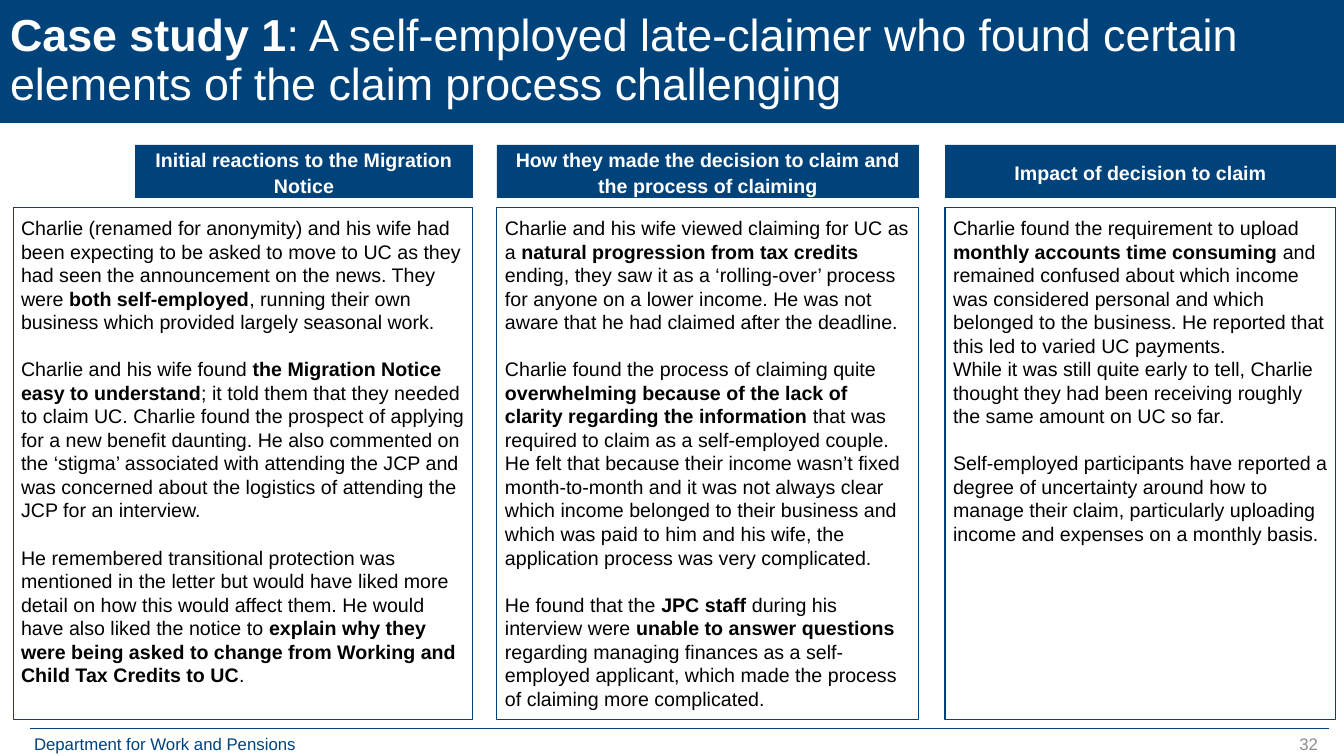
from pptx import Presentation
from pptx.dml.color import RGBColor
from pptx.enum.shapes import MSO_CONNECTOR as Conn, MSO_SHAPE as Kind
from pptx.enum.text import MSO_ANCHOR as Anchor, MSO_AUTO_SIZE as Fit, PP_ALIGN as Align
from pptx.oxml.ns import qn
from pptx.util import Emu, Pt
from lxml.etree import SubElement

WIDE, HIGH = 1344, 756
SCALE = 12192000 / WIDE


def px(num):
    return Emu(round(num * SCALE))


def paint(color, code):
    color.rgb = RGBColor.from_string(code)


def write(frame, paras, size=14, color="000000", align=Align.LEFT, anchor=Anchor.TOP,
          inset=(10, 5), lead=None, gaps=()):
    frame.word_wrap = True
    frame.auto_size = Fit.NONE
    frame.vertical_anchor = anchor
    frame.margin_left = frame.margin_right = px(inset[0])
    frame.margin_top = frame.margin_bottom = px(inset[1])
    for num, text in enumerate(paras):
        para = frame.add_paragraph() if num else frame.paragraphs[0]
        para.alignment = align
        if lead:
            para.line_spacing = lead
        if num in gaps:
            para.space_before = Pt(16.8)
        for part, words in enumerate(text.split("*")):
            if words:
                run = para.add_run()
                run.text = words
                font = run.font
                font.name, font.size, font.bold = "Arial", Pt(size), part % 2 == 1
                paint(font.color, color)


class Page:
    blue, white, gray = "00437B", "FFFFFF", "8C8C8C"

    def __init__(self, deck):
        self.slide = deck.slides.add_slide(deck.slide_layouts[5])
        self.shapes = self.slide.shapes

    def title(self, text, high):
        head = self.shapes.title
        head.left, head.top, head.width, head.height = px(0), px(0), px(WIDE), px(high)
        head.fill.solid()
        paint(head.fill.fore_color, self.blue)
        write(head.text_frame, [text], size=32, color=self.white, anchor=Anchor.MIDDLE, lead=0.9)

    def label(self, text, left, top, width, high, **style):
        box = self.shapes.add_textbox(px(left), px(top), px(width), px(high))
        write(box.text_frame, [text], size=12, **style)

    def rule(self, left, right, top):
        line = self.shapes.add_connector(Conn.STRAIGHT, px(left), px(top), px(right), px(top))
        line.line.width = Pt(0.5)
        paint(line.line.color, self.blue)
        SubElement(line._element.spPr, qn("a:effectLst"))

    def rect(self, left, top, width, high):
        box = self.shapes.add_shape(Kind.RECTANGLE, px(left), px(top), px(width), px(high))
        box.shadow.inherit = False
        return box

    def banner(self, text, left, width):
        box = self.rect(left, 145, width, 53)
        box.fill.solid()
        paint(box.fill.fore_color, self.blue)
        box.line.fill.background()
        write(box.text_frame, [f"*{text}*"], color=self.white, align=Align.CENTER,
              anchor=Anchor.MIDDLE, inset=(16, 8), lead=1.1)

    def panel(self, paras, gaps, left, width):
        box = self.rect(left, 208, width, 512)
        box.fill.background()
        box.line.width = Pt(0.75)
        paint(box.line.color, self.blue)
        write(box.text_frame, paras, inset=(8, 8), gaps=gaps)


COLUMNS = [
    ("Initial reactions to the Migration Notice", 13, 460, 122, (1, 2), [
        "Charlie (renamed for anonymity) and his wife had been expecting to be asked to move to UC "
        "as they had seen the announcement on the news. They were *both self-employed*, running "
        "their own business which provided largely seasonal work.",
        "Charlie and his wife found *the Migration Notice easy to understand*; it told them that "
        "they needed to claim UC. Charlie found the prospect of applying for a new benefit "
        "daunting. He also commented on the ‘stigma’ associated with attending the JCP and was "
        "concerned about the logistics of attending the JCP for an interview.",
        "He remembered transitional protection was mentioned in the letter but would have liked "
        "more detail on how this would affect them. He would have also liked the notice to "
        "*explain why they were being asked to change from Working and Child Tax Credits to UC*.",
    ]),
    ("How they made the decision to claim and the process of claiming", 497, 422, 0, (1, 2), [
        "Charlie and his wife viewed claiming for UC as a *natural progression from tax credits* "
        "ending, they saw it as a ‘rolling-over’ process for anyone on a lower income. He was not "
        "aware that he had claimed after the deadline.",
        "Charlie found the process of claiming quite *overwhelming because of the lack of clarity "
        "regarding the information* that was required to claim as a self-employed couple. He felt "
        "that because their income wasn’t fixed month-to-month and it was not always clear which "
        "income belonged to their business and which was paid to him and his wife, the "
        "application process was very complicated.",
        "He found that the *JPC staff* during his interview were *unable to answer questions* "
        "regarding managing finances as a self-employed applicant, which made the process of "
        "claiming more complicated.",
    ]),
    ("Impact of decision to claim", 945, 391, 0, (2,), [
        "Charlie found the requirement to upload *monthly accounts time consuming* and remained "
        "confused about which income was considered personal and which belonged to the business. "
        "He reported that this led to varied UC payments.",
        "While it was still quite early to tell, Charlie thought they had been receiving roughly "
        "the same amount on UC so far.",
        "Self-employed participants have reported a degree of uncertainty around how to manage "
        "their claim, particularly uploading income and expenses on a monthly basis.",
    ]),
]


def main():
    deck = Presentation()
    deck.slide_width, deck.slide_height = px(WIDE), px(HIGH)
    page = Page(deck)
    page.title("*Case study 1*: A self-employed late-claimer who found certain elements of the "
               "claim process challenging", 123)
    page.label("Department for Work and Pensions", 24, 729, 326, 27, color=page.blue,
               align=Align.JUSTIFY)
    page.rule(30, 1329, 728)
    page.label("32", 1026, 729, 302, 27, color=page.gray, align=Align.RIGHT)
    for head, left, width, indent, gaps, paras in COLUMNS:
        page.banner(head, left + indent, width - indent)
        page.panel(paras, gaps, left, width)
    deck.save("out.pptx")


if __name__ == "__main__":
    main()
